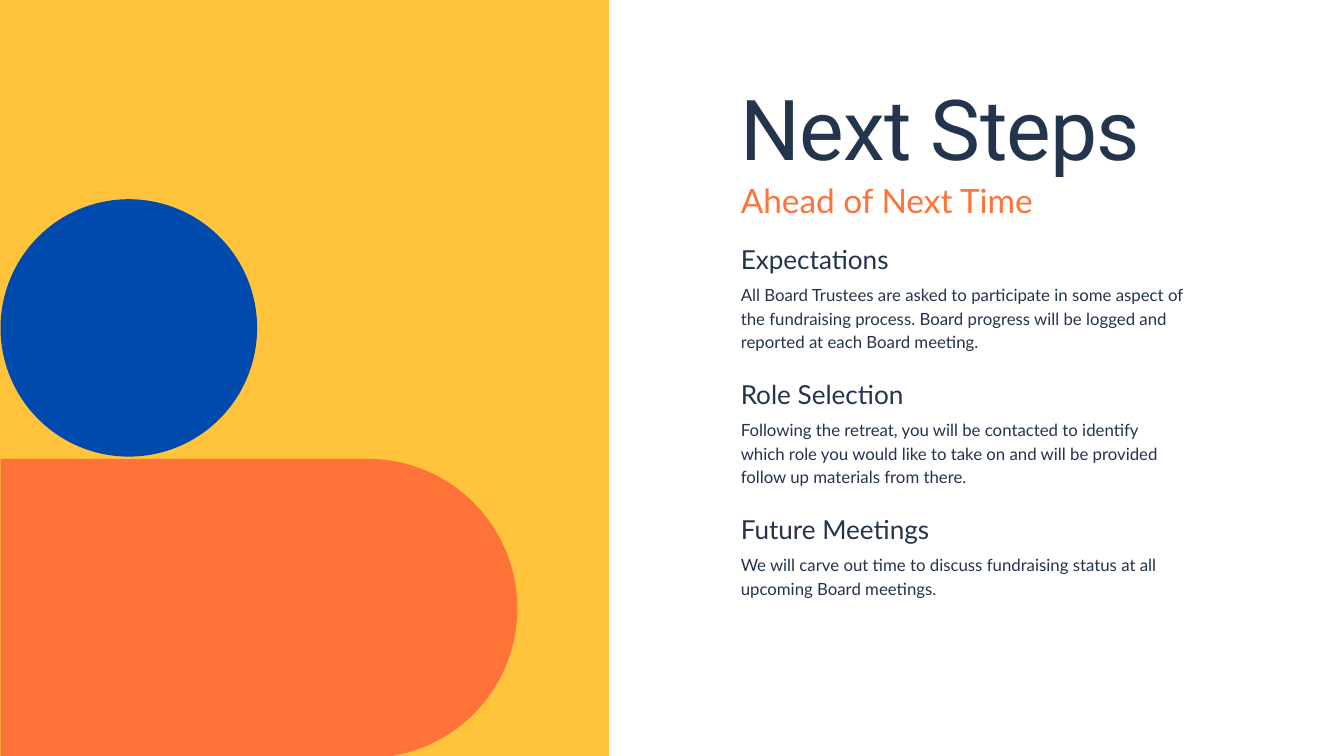
from pptx import Presentation
from pptx.dml.color import RGBColor
from pptx.enum.shapes import MSO_SHAPE as Shape
from pptx.enum.text import MSO_ANCHOR as Anchor, MSO_AUTO_SIZE as AutoSize, PP_ALIGN as Align
from pptx.util import Cm, Pt

TITLE_ONLY = 5
TEXT_LEFT = 28
BODY_WIDTH = 16.74
FIRST_SECTION_TOP = 9.14
SECTION_PITCH = 5.1
BODY_OFFSET = 1.5
LINE_HEIGHT = 0.85

SECTIONS = [
    ("Expectations", 3,
     "All Board Trustees are asked to participate in some aspect of the fundraising process. "
     "Board progress will be logged and reported at each Board meeting."),
    ("Role Selection", 3,
     "Following the retreat, you will be contacted to identify which role you would like to "
     "take on and will be provided follow up materials from there."),
    ("Future Meetings", 2,
     "We will carve out time to discuss fundraising status at all upcoming Board meetings."),
]


def color(value):
    return RGBColor.from_string(value)


def write(shape, text, *, size, leading, font, fill, tracking=0):
    frame = shape.text_frame
    frame.word_wrap = True
    frame.auto_size = AutoSize.NONE
    frame.vertical_anchor = Anchor.TOP
    frame.margin_left = frame.margin_right = frame.margin_top = frame.margin_bottom = 0
    paragraph = frame.paragraphs[0]
    paragraph.alignment = Align.LEFT
    paragraph.line_spacing = Pt(leading)
    run = paragraph.add_run()
    run.text = text
    run.font.name = font
    run.font.size = Pt(size)
    run.font.color.rgb = color(fill)
    if tracking:
        run._r.get_or_add_rPr().set("spc", str(round(tracking * 100)))


class SlideBuilder:
    navy = "23344D"
    orange = "FF7338"
    yellow = "FFC33C"
    blue = "004AAD"
    title_font = "Roboto"
    body_font = "Lato"

    def __init__(self, slide):
        self.slide = slide

    def shape(self, kind, left, top, width, height, fill):
        shape = self.slide.shapes.add_shape(kind, Cm(left), Cm(top), Cm(width), Cm(height))
        shape.shadow.inherit = False
        shape.fill.solid()
        shape.fill.fore_color.rgb = color(fill)
        shape.line.fill.background()
        return shape

    def title(self, text, left, top, width, height):
        title = self.slide.shapes.title
        title.left, title.top = Cm(left), Cm(top)
        title.width, title.height = Cm(width), Cm(height)
        write(title, text, size=90, leading=112.5, font=self.title_font,
              fill=self.navy, tracking=-0.9)

    def text(self, text, top, width, height, size, leading, fill=navy):
        box = self.slide.shapes.add_textbox(Cm(TEXT_LEFT), Cm(top), Cm(width), Cm(height))
        write(box, text, size=size, leading=leading, font=self.body_font, fill=fill)

    def section(self, heading, body, lines, top):
        self.text(heading, top, BODY_WIDTH, 1.2, 28, 35.8)
        self.text(body, top + BODY_OFFSET, BODY_WIDTH, lines * LINE_HEIGHT, 18, 25.2)


def main():
    presentation = Presentation()
    presentation.slide_width = Cm(50.8)
    presentation.slide_height = presentation.slide_width * 9 // 16
    slide = presentation.slides.add_slide(presentation.slide_layouts[TITLE_ONLY])
    builder = SlideBuilder(slide)

    panel = builder.shape(Shape.RECTANGLE, 0, 0, 23.03, 28.58, builder.yellow)
    panel.height = presentation.slide_height
    builder.shape(Shape.OVAL, 0.02, 7.53, 9.7, 9.73, builder.blue)
    half_pill = builder.shape(Shape.ROUND_2_SAME_RECTANGLE, 4.14, 13.23, 11.3, 19.53, builder.orange)
    half_pill.adjustments[0] = 0.5
    half_pill.rotation = 90

    builder.title("Next Steps", TEXT_LEFT, 2.74, 19.33, 3.91)
    builder.text("Ahead of Next Time", 6.76, 19.3, 1.52, 35.8, 44, builder.orange)
    for index, (heading, lines, body) in enumerate(SECTIONS):
        builder.section(heading, body, lines, FIRST_SECTION_TOP + index * SECTION_PITCH)

    presentation.save("out.pptx")


if __name__ == "__main__":
    main()
